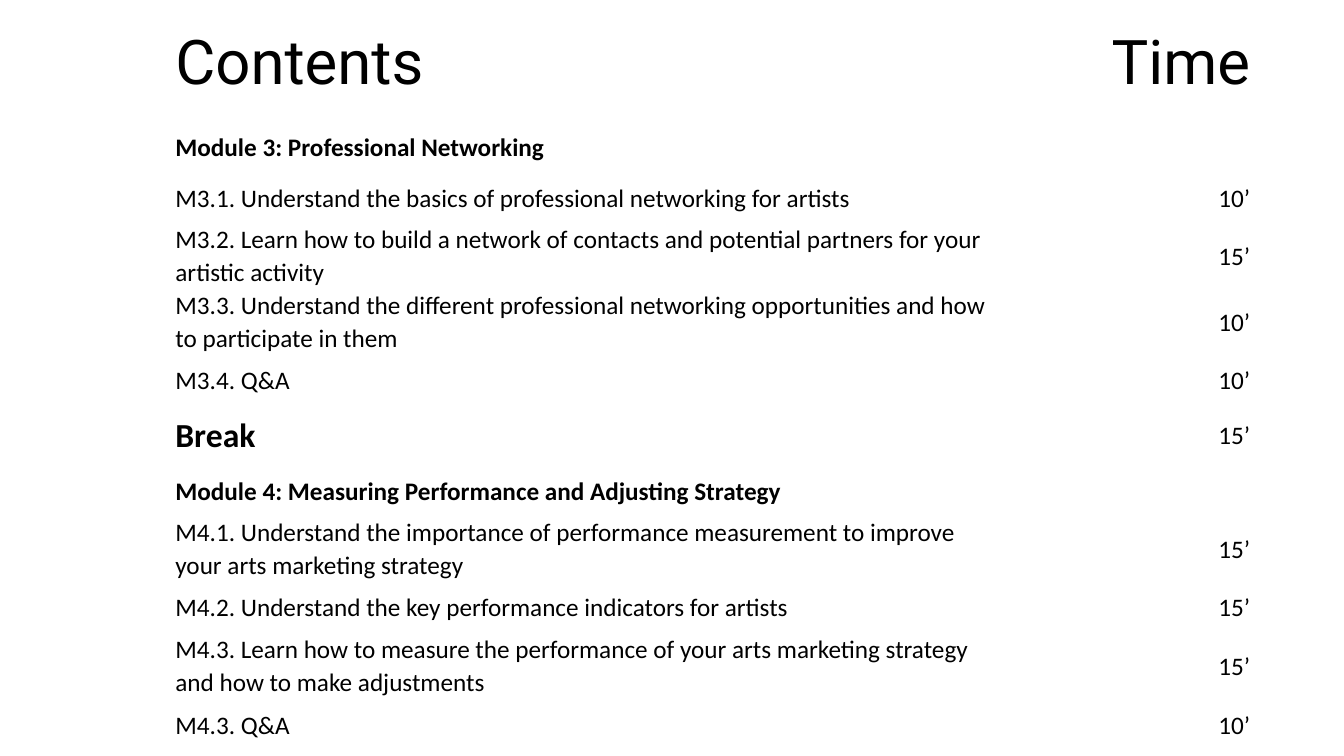
from dataclasses import dataclass

from pptx import Presentation
from pptx.dml.color import RGBColor
from pptx.enum.text import MSO_ANCHOR, PP_ALIGN
from pptx.table import _Cell
from pptx.util import Inches, Pt

BLACK = RGBColor(0x00, 0x00, 0x00)
LEFT = PP_ALIGN.LEFT
RIGHT = PP_ALIGN.RIGHT
MIDDLE = MSO_ANCHOR.MIDDLE


@dataclass
class Entry:
    text: str
    time: str = ""
    height: float = 0.5
    size: int = 18
    bold: bool = False


HEAD = Entry("Contents", "Time", height=1.21, size=44)
AGENDA = [
    Entry("Module 3: Professional Networking", bold=True),
    Entry("M3.1. Understand the basics of professional networking for artists", "10’"),
    Entry("M3.2. Learn how to build a network of contacts and potential partners "
          "for your artistic activity", "15’", height=0.54),
    Entry("M3.3. Understand the different professional networking opportunities "
          "and how to participate in them", "10’", height=0.57),
    Entry("M3.4. Q&A", "10’"),
    Entry("Break", "15’", height=0.6, size=24, bold=True),
    Entry("Module 4: Measuring Performance and Adjusting Strategy", bold=True),
    Entry("M4.1. Understand the importance of performance measurement to improve "
          "your arts marketing strategy", "15’", height=0.6),
    Entry("M4.2. Understand the key performance indicators for artists", "15’"),
    Entry("M4.3. Learn how to measure the performance of your arts marketing "
          "strategy and how to make adjustments", "15’", height=0.67),
    Entry("M4.3. Q&A", "10’"),
]
WIDTHS = [8.34, 2.46]


def write(cell: _Cell, text: str, *, size: int = 18, face: str = "Calibri",
          bold: bool = False, align: PP_ALIGN = LEFT) -> None:
    cell.fill.background()
    cell.vertical_anchor = MIDDLE
    cell.margin_left = cell.margin_right = Inches(0.07)
    cell.margin_top = cell.margin_bottom = 0
    para = cell.text_frame.paragraphs[0]
    para.alignment = align
    para.line_spacing = 1.07
    para.space_after = Pt(8)
    para.font.size = Pt(size)
    if text:
        run = para.add_run()
        run.text = text
        run.font.name = face
        run.font.size = Pt(size)
        run.font.bold = bold
        run.font.color.rgb = BLACK


def main() -> None:
    deck = Presentation()
    deck.slide_width = Inches(13.33)
    deck.slide_height = Inches(7.5)
    slide = deck.slides.add_slide(deck.slide_layouts[6])
    entries = [HEAD, *AGENDA]
    table = slide.shapes.add_table(
        len(entries), len(WIDTHS), Inches(1.67), 0, Inches(10.8), Inches(7.37)).table
    table.first_row = False
    table.horz_banding = False
    for column, width in zip(table.columns, WIDTHS):
        column.width = Inches(width)
    for index, entry in enumerate(entries):
        table.rows[index].height = Inches(entry.height)
        is_head = entry is HEAD
        face = "Roboto" if is_head else "Calibri"
        write(table.cell(index, 0), entry.text, size=entry.size, face=face,
              bold=entry.bold)
        write(table.cell(index, 1), entry.time, size=entry.size if is_head else 18,
              face=face, align=RIGHT)
    deck.save("out.pptx")


if __name__ == "__main__":
    main()
